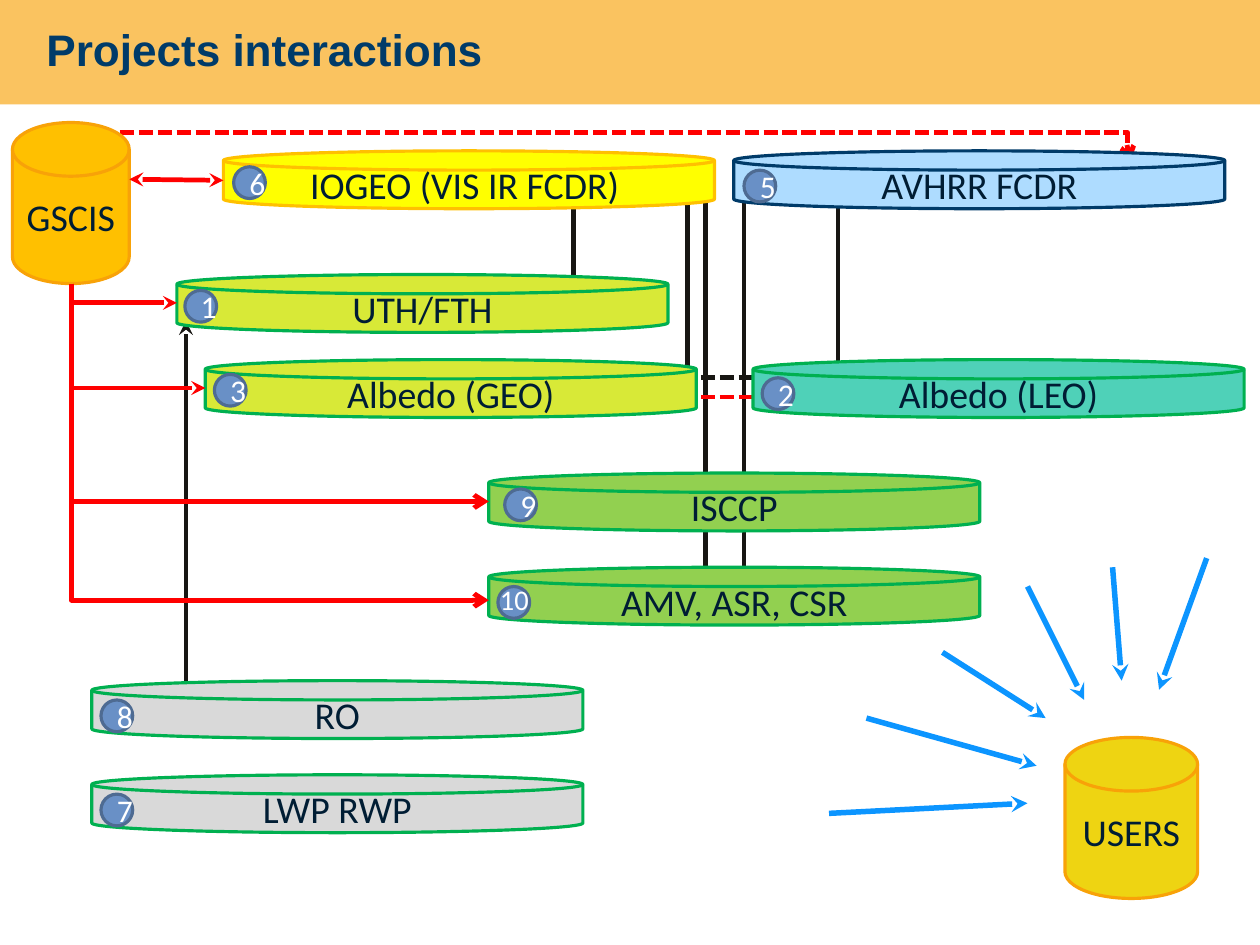
from pptx import Presentation
from pptx.dml.color import RGBColor
from pptx.enum.dml import MSO_LINE as Dash
from pptx.enum.shapes import MSO_CONNECTOR as Link, MSO_SHAPE as Geo
from pptx.enum.text import MSO_ANCHOR as Anchor, PP_ALIGN as Align
from pptx.oxml.ns import qn
from pptx.util import Inches, Pt
from lxml.etree import SubElement as Sub

tint = RGBColor.from_string
INK, BLACK, RED, BLUE = "001D34", "181613", "FF0000", "0C95FF"
GREEN, LIME, LEAF, GREY = "00B050", "D8E937", "92D050", "D9D9D9"

deck = Presentation()
deck.slide_width, deck.slide_height = Inches(11.11), Inches(8.33)
slide = deck.slides.add_slide(deck.slide_layouts[5])
items = slide.shapes


def draw(geo, box, fill, edge=None, text="", size=24, hue=INK):
    item = items.add_shape(geo, *map(Inches, box))
    item.shadow.inherit = False
    item.fill.solid()
    item.fill.fore_color.rgb = tint(fill)
    if edge:
        item.line.color.rgb = tint(edge)
        item.line.width = Pt(2)
    else:
        item.line.fill.background()
    frame = item.text_frame
    frame.word_wrap, frame.vertical_anchor = True, Anchor.MIDDLE
    para = frame.paragraphs[0]
    para.text, para.alignment = text, Align.CENTER
    for key, val in {"name": "Calibri", "size": Pt(size)}.items():
        setattr(para.font, key, val)
    para.font.color.rgb = tint(hue)
    return item


def join(ends, hue, head=None, tail=None, dash=None, bend=None, width=3):
    kind = Link.STRAIGHT if bend is None else Link.ELBOW
    line = items.add_connector(kind, *map(Inches, ends))
    line.line.color.rgb = tint(hue)
    for key, val in {"width": Pt(width), "dash_style": dash}.items():
        setattr(line.line, key, val)
    prop = line._element.spPr
    for tag, tip in (("a:headEnd", head), ("a:tailEnd", tail)):
        if tip:
            Sub(prop.find(qn("a:ln")), qn(tag), type=tip)
    if bend is not None:
        grid = prop.find(qn("a:prstGeom")).find(qn("a:avLst"))
        Sub(grid, qn("a:gd"), name="adj1", fmla=f"val {bend}")
    Sub(prop, qn("a:effectLst"))


# Title on its band
band = draw(Geo.RECTANGLE, (0, 0, 11.11, 0.92), "FAC360")
items._spTree.insert(2, band._element)
title = items.title
place = {"left": 0.31, "top": 0.12, "width": 10.5, "height": 0.62}
for key, val in place.items():
    setattr(title, key, Inches(val))
title.text_frame.vertical_anchor = Anchor.MIDDLE
para = title.text_frame.paragraphs[0]
para.text, para.alignment = "Projects interactions", Align.LEFT
for key, val in {"name": "Arial", "size": Pt(28), "bold": True}.items():
    setattr(para.font, key, val)
para.font.color.rgb = tint("003B69")

# Links behind the projects
for x, end in ((7.39, 3.33), (6.56, 5.08), (6.22, 5.08), (6.06, 3.33)):
    join((x, 1.75, x, end), BLACK)
join((5.06, 1.83, 5.06, 2.42), BLACK)
join((1.64, 2.83, 1.64, 6.33), BLACK, head="stealth")
join((6.18, 3.33, 6.72, 3.33), BLACK, dash=Dash.SQUARE_DOT)
join((6.18, 3.5, 6.89, 3.5), RED, dash=Dash.SQUARE_DOT)
join((0.89, 1.17, 9.97, 1.42), RED, tail="arrow", dash=Dash.SQUARE_DOT, bend=99700)

# Source and users
draw(Geo.FLOWCHART_MAGNETIC_DISK, (0.11, 1.08, 1.03, 1.42), "FFC000", "F8A208", "GSCIS")
draw(Geo.FLOWCHART_MAGNETIC_DISK, (9.39, 6.5, 1.17, 1.42), "EED412", "F8A208", "USERS")

# Projects: number, name, left, top, badge offset, fill, edge
jobs = [
    ("5", "AVHRR FCDR", 6.47, 1.33, 0.09, 0.17, "AEDCFF", "003B69"),
    ("10", "AMV, ASR, CSR", 4.31, 5, 0.08, 0.17, LEAF, GREEN),
    ("2", "Albedo (LEO)", 6.64, 3.17, 0.08, 0.16, "4FD1B8", GREEN),
    ("6", "IOGEO (VIS IR FCDR) ", 1.97, 1.33, 0.09, 0.14, "FFFF00", "FFC000"),
    ("1", "UTH/FTH", 1.56, 2.42, 0.07, 0.14, LIME, GREEN),
    ("3", "Albedo (GEO)", 1.81, 3.17, 0.08, 0.13, LIME, GREEN),
    ("8", "RO", 0.81, 6, 0.08, 0.17, GREY, GREEN),
    ("9", "ISCCP", 4.31, 4.17, 0.14, 0.14, LEAF, GREEN),
    ("7", "LWP RWP", 0.81, 6.83, 0.08, 0.17, GREY, GREEN),
]
for num, name, x, y, dx, dy, fill, edge in jobs:
    draw(Geo.FLOWCHART_MAGNETIC_DISK, (x, y, 4.33, 0.51), fill, edge, name)
    wide = len(num) > 1
    draw(Geo.OVAL, (x + dx, y + dy, 0.28, 0.28), "6990C6", "4E6B92",
         "" if wide else num, 20, "FFFFFF")
    if wide:  # two digits need a box wider than the badge
        label = items.add_textbox(*map(Inches, (x, y + 0.08, 0.5, 0.4)))
        label.text_frame.word_wrap = True
        para = label.text_frame.paragraphs[0]
        para.text = num
        for key, val in {"name": "Calibri", "size": Pt(18)}.items():
            setattr(para.font, key, val)
        para.font.color.rgb = tint("FFFFFF")

# Red links from the source
join((1.14, 1.58, 1.97, 1.59), RED, head="stealth", tail="stealth")
join((0.64, 2.67, 1.56, 2.67), RED, tail="stealth")
for x, y, tip in ((1.81, 3.42, "stealth"), (4.31, 4.42, "arrow"), (4.31, 5.29, "arrow")):
    join((0.63, 2.5, x, y), RED, tail=tip, bend=0)

# Blue arrows towards the users
rays = [
    (7.64, 6.33, 9.14, 6.75), (8.31, 5.75, 9.22, 6.33), (7.31, 7.17, 9.06, 7.08),
    (9.06, 5.17, 9.56, 6.17), (9.81, 5, 9.89, 6), (10.64, 4.92, 10.22, 6.08),
]
for ray in rays:
    join(ray, BLUE, tail="stealth", width=3.5)

deck.save("out.pptx")
